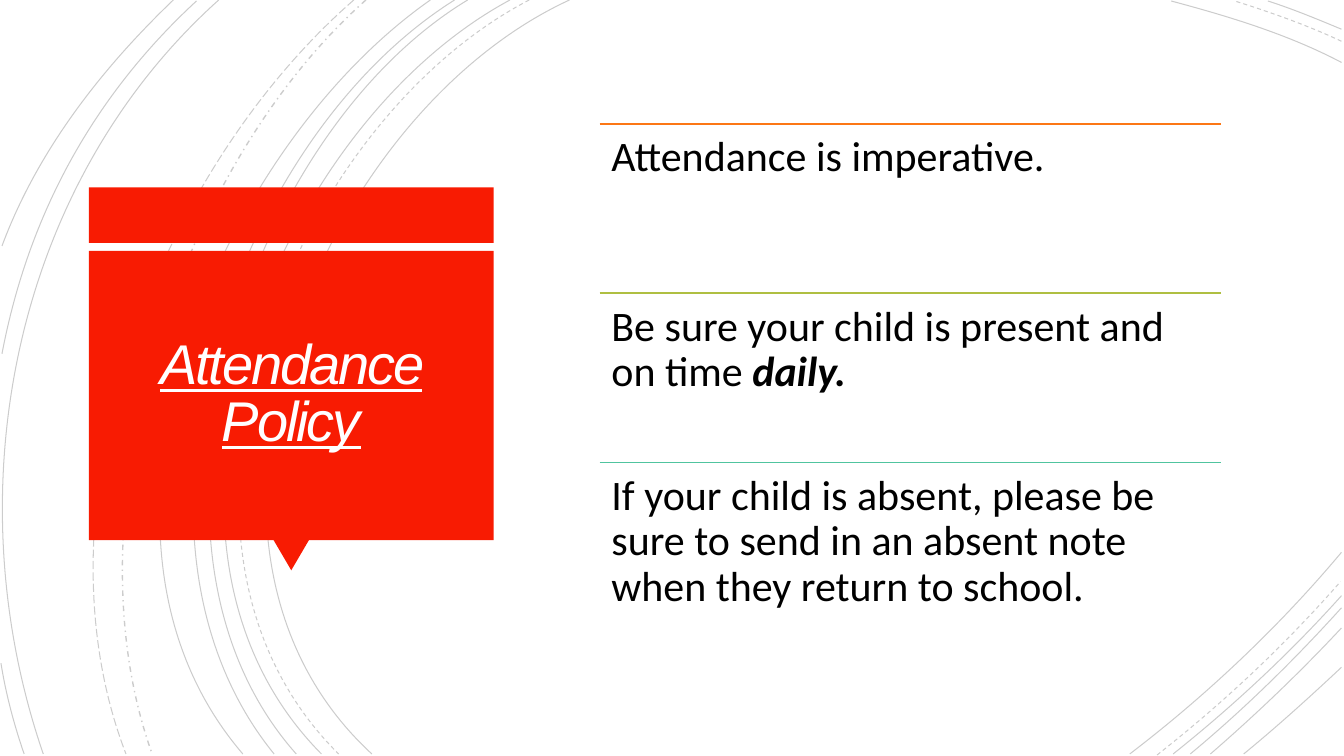
from lxml.etree import SubElement
from pptx import Presentation
from pptx.dml.color import RGBColor
from pptx.enum.dml import MSO_LINE as Dash
from pptx.enum.shapes import MSO_CONNECTOR as Connector, MSO_SHAPE as Shape
from pptx.enum.text import MSO_ANCHOR as Anchor, MSO_AUTO_SIZE as AutoSize, PP_ALIGN as Align
from pptx.oxml.ns import qn
from pptx.util import Cm, Pt

BLACK = RGBColor(0x00, 0x00, 0x00)
WHITE = RGBColor(0xFF, 0xFE, 0xFF)
RED = RGBColor(0xF8, 0x1B, 0x02)
ORANGE = RGBColor(0xFC, 0x77, 0x15)
OLIVE = RGBColor(0xAF, 0xBF, 0x41)
TEAL = RGBColor(0x50, 0xC4, 0x9F)

ARC_UNIT = Cm(0.0254)
SOLID_ARCS = [
    ((565, 0), (315, 115), (143, 540), (369, 748)),
    ((1331, 62), (1278, 34), (1218, 16), (1162, 1)),
    ((1121, 748), (1197, 690), (1269, 622), (1331, 548)),
    ((506, 0), (270, 127), (110, 537), (319, 748)),
    ((1331, 29), (1307, 19), (1283, 9), (1258, 1)),
    ((1164, 748), (1223, 701), (1280, 648), (1331, 591)),
    ((464, 0), (244, 133), (110, 541), (294, 748)),
    ((1181, 748), (1234, 704), (1284, 655), (1331, 603)),
    ((451, 0), (231, 138), (97, 533), (272, 748)),
    ((1201, 748), (1246, 709), (1290, 667), (1331, 623)),
    ((427, 0), (217, 147), (53, 529), (241, 748)),
    ((1234, 748), (1267, 721), (1299, 692), (1331, 662)),
    ((217, 0), (11, 185), (-46, 490), (43, 748)),
    ((195, 1), (92, 96), (28, 214), (2, 351)),
    ((1, 658), (6, 689), (14, 719), (24, 748)),
    ((172, 0), (100, 69), (37, 150), (2, 244)),
]
DASHED_ARCS = [
    ((525, 0), (285, 125), (123, 537), (336, 748)),
    ((1331, 41), (1297, 25), (1260, 12), (1225, 1)),
    ((1148, 749), (1213, 698), (1275, 640), (1330, 577)),
]
DASH_DOT_ARCS = [((363, 0), (176, 166), (65, 509), (151, 748))]
LONG_DASH_ARCS = [((351, 0), (157, 169), (29, 499), (125, 748))]
ARC_STYLES = [
    (SOLID_ARCS, Dash.SOLID, 0.75),
    (DASHED_ARCS, Dash.DASH, 0.75),
    (DASH_DOT_ARCS, Dash.DASH_DOT, 1),
    (LONG_DASH_ARCS, Dash.LONG_DASH, 0.75),
]

POLICIES = [
    (ORANGE, [("Attendance is imperative.", False)]),
    (OLIVE, [("Be sure your child is present and on time ", False), ("daily.", True)]),
    (TEAL, [("If your child is absent, please be sure to send in an absent note "
             "when they return to school.", False)]),
]


def bend_segments(shape):
    segments = list(shape._element.iter(qn("a:lnTo")))
    curve = SubElement(segments[0].getparent(), qn("a:cubicBezTo"))
    for segment in segments:
        curve.append(segment[0])
        segment.getparent().remove(segment)


def add_arc(slide, controls, dash, width):
    builder = slide.shapes.build_freeform(*controls[0], scale=ARC_UNIT)
    builder.add_line_segments(controls[1:], close=False)
    arc = builder.convert_to_shape()
    bend_segments(arc)
    arc.shadow.inherit = False
    arc.fill.background()
    arc.line.color.rgb = BLACK
    arc.line.width = Pt(width)
    arc.line.dash_style = dash
    color = arc.line._ln.find(".//" + qn("a:srgbClr"))
    SubElement(color, qn("a:alpha")).set("val", "20000")


def add_background(slide):
    for arcs, dash, width in ARC_STYLES:
        for controls in arcs:
            add_arc(slide, controls, dash, width)


def add_red_shape(slide, kind, left, top, width, height):
    shape = slide.shapes.add_shape(kind, left, top, width, height)
    shape.shadow.inherit = False
    shape.fill.solid()
    shape.fill.fore_color.rgb = RED
    shape.line.fill.background()
    return shape


def set_margins(frame, margin):
    frame.margin_left = frame.margin_right = margin
    frame.margin_top = frame.margin_bottom = margin


def add_title_panel(slide, left, top, width, height):
    body_top, body_height = top + Cm(1.6), height - Cm(1.6)
    pointer_width, inset = Cm(0.89), Cm(0.22)
    add_red_shape(slide, Shape.RECTANGLE, left, top, width, Cm(1.4))
    pointer = add_red_shape(slide, Shape.ISOSCELES_TRIANGLE, left + (width - pointer_width) // 2,
                            top + height, pointer_width, Cm(0.76))
    pointer.rotation = 180
    add_red_shape(slide, Shape.RECTANGLE, left, body_top, width, body_height)

    title = slide.shapes.title
    slide.shapes._spTree.append(title._element)
    title.left, title.top = left + inset, body_top + inset
    title.width, title.height = width - 2 * inset, body_height - 2 * inset
    frame = title.text_frame
    frame.word_wrap = True
    frame.auto_size = AutoSize.NONE
    frame.vertical_anchor = Anchor.MIDDLE
    set_margins(frame, Cm(0.64))
    paragraph = frame.paragraphs[0]
    paragraph.alignment = Align.CENTER
    paragraph.line_spacing = 0.85
    run = paragraph.add_run()
    run.text = "Attendance Policy"
    run.font.name = "Arial"
    run.font.size = Pt(40)
    run.font.italic = True
    run.font.underline = True
    run.font.color.rgb = WHITE
    run._r.get_or_add_rPr().set("spc", "-150")


def add_policy(slide, color, runs, left, top, width, height):
    rule = slide.shapes.add_connector(Connector.STRAIGHT, left, top, left + width, top)
    rule.line.color.rgb = color
    rule.line.width = Pt(1.25)
    SubElement(rule._element.spPr, qn("a:effectLst"))

    frame = slide.shapes.add_textbox(left, top, width, height).text_frame
    frame.word_wrap = True
    set_margins(frame, Cm(0.3))
    paragraph = frame.paragraphs[0]
    paragraph.line_spacing = 0.9
    for text, emphasis in runs:
        run = paragraph.add_run()
        run.text = text
        run.font.name = "Calibri"
        run.font.size = Pt(30)
        run.font.bold = run.font.italic = emphasis
        run.font.color.rgb = BLACK


def add_policy_list(slide, left, top, width, height):
    row_height = height // len(POLICIES)
    for index, (color, runs) in enumerate(POLICIES):
        add_policy(slide, color, runs, left, top + index * row_height, width, row_height)


def main():
    presentation = Presentation()
    presentation.slide_width, presentation.slide_height = Cm(33.87), Cm(19.05)
    slide = presentation.slides.add_slide(presentation.slide_layouts[5])
    add_background(slide)
    add_title_panel(slide, Cm(2.24), Cm(4.72), Cm(10.2), Cm(8.89))
    add_policy_list(slide, Cm(15.11), Cm(3.12), Cm(15.67), Cm(12.8))
    presentation.save("out.pptx")


if __name__ == "__main__":
    main()
